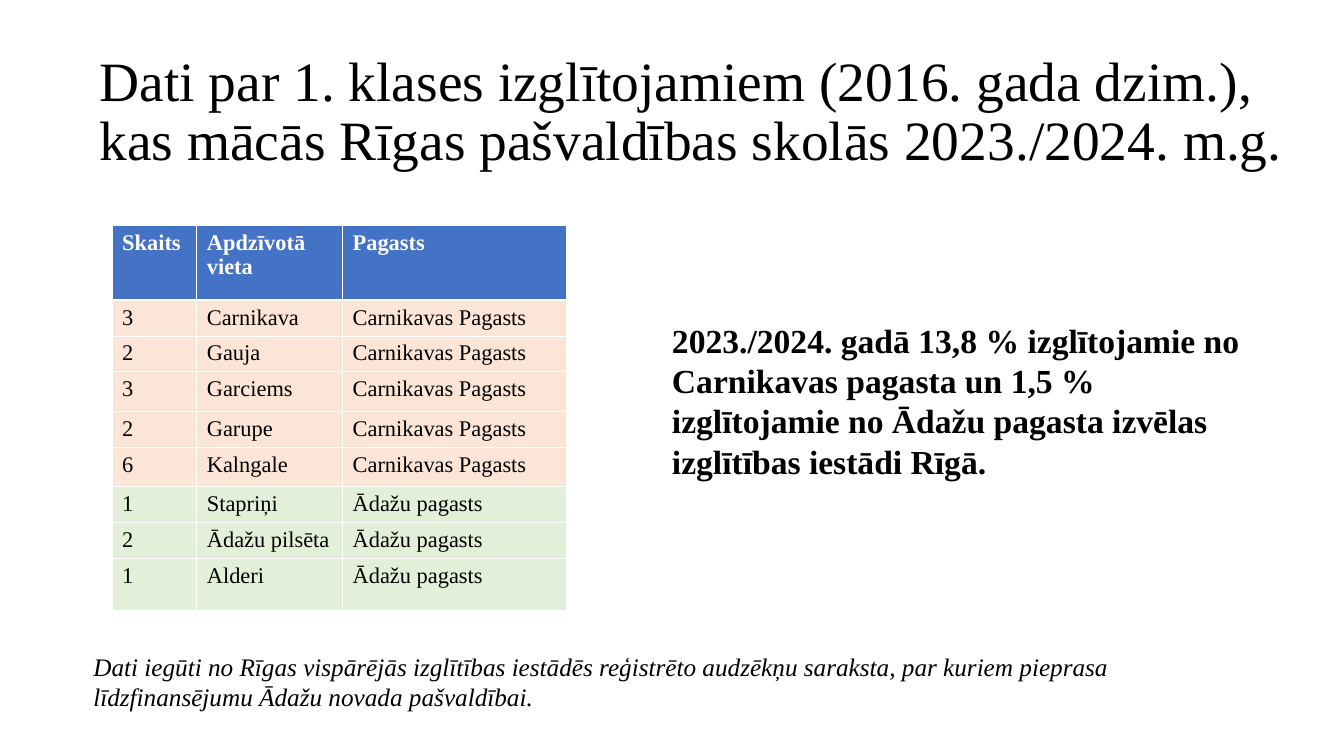
from lxml import etree
from pptx import Presentation
from pptx.dml.color import RGBColor
from pptx.enum.text import MSO_ANCHOR, MSO_AUTO_SIZE, PP_ALIGN
from pptx.oxml.ns import qn
from pptx.util import Cm, Pt

LEFT = PP_ALIGN.LEFT
MIDDLE = MSO_ANCHOR.MIDDLE
NO_AUTOFIT = MSO_AUTO_SIZE.NONE
GROW = MSO_AUTO_SIZE.SHAPE_TO_FIT_TEXT

FONT = "Times New Roman"
BLACK = RGBColor(0x00, 0x00, 0x00)
WHITE = RGBColor(0xFF, 0xFF, 0xFF)
HEADER_BLUE = RGBColor(0x44, 0x72, 0xC4)
CARNIKAVA_PEACH = RGBColor(0xFB, 0xE5, 0xD6)
ADAZI_GREEN = RGBColor(0xE2, 0xF0, 0xD9)

TITLE = ("Dati par 1. klases izglītojamiem (2016. gada dzim.), "
         "kas mācās Rīgas pašvaldības skolās 2023./2024. m.g.")
CONCLUSION = ("2023./2024. gadā 13,8 % izglītojamie no Carnikavas pagasta un 1,5 % "
              "izglītojamie no Ādažu pagasta izvēlas izglītības iestādi Rīgā.")
SOURCE_NOTE = ("Dati iegūti no Rīgas vispārējās izglītības iestādēs reģistrēto audzēkņu "
               "saraksta, par kuriem pieprasa līdzfinansējumu Ādažu novada pašvaldībai.")

HEADER = ("Skaits", "Apdzīvotā vieta", "Pagasts")
PARISHES = (
    ("Carnikavas Pagasts", CARNIKAVA_PEACH,
     ((3, "Carnikava"), (2, "Gauja"), (3, "Garciems"), (2, "Garupe"), (6, "Kalngale"))),
    ("Ādažu pagasts", ADAZI_GREEN,
     ((1, "Stapriņi"), (2, "Ādažu pilsēta"), (1, "Alderi"))),
)
COLUMN_WIDTHS = (3.2, 5.51, 8.46)
ROW_HEIGHTS = (2.84, 1.35, 1.35, 1.5, 1.35, 1.5, 1.35, 1.35, 1.96)


def place(shape, box):
    """Move and size a shape to a box of left, top, width and height in cm."""
    shape.left, shape.top, shape.width, shape.height = map(Cm, box)


def style_paragraph(paragraph, size, color=BLACK, bold=False, italic=False):
    """Set the font of a whole paragraph."""
    font = paragraph.font
    font.name, font.size = FONT, Pt(size)
    font.bold, font.italic = bold, italic
    font.color.rgb = color


def add_title(slide, box):
    """Fill and format the title placeholder."""
    title = slide.shapes.title
    place(title, box)
    frame = title.text_frame
    frame.text = TITLE
    frame.word_wrap = True
    frame.auto_size = NO_AUTOFIT
    frame.vertical_anchor = MIDDLE
    paragraph = frame.paragraphs[0]
    paragraph.alignment = LEFT
    paragraph.line_spacing = 0.9
    style_paragraph(paragraph, 59.4)


def add_text(slide, box, text, size, **style):
    """Add a wrapped text box with one paragraph."""
    frame = slide.shapes.add_textbox(*map(Cm, box)).text_frame
    frame.word_wrap = True
    frame.auto_size = GROW
    frame.text = text
    style_paragraph(frame.paragraphs[0], size, **style)


def add_cell_borders(cell, top_width, bottom_width):
    """Draw white borders around a cell, with widths in points."""
    properties = cell._tc.get_or_add_tcPr()
    widths = {"a:lnL": 1, "a:lnR": 1, "a:lnT": top_width, "a:lnB": bottom_width}
    for position, (tag, width) in enumerate(widths.items()):
        line = etree.Element(qn(tag), w=str(Pt(width)))
        fill = etree.SubElement(line, qn("a:solidFill"))
        etree.SubElement(fill, qn("a:srgbClr"), val=str(WHITE))
        properties.insert(position, line)


def add_pupil_table(slide, left, top):
    """Add the table of pupils by settlement, tinted by parish."""
    rows = [(HEADER, HEADER_BLUE)]
    for parish, tint, settlements in PARISHES:
        rows += [((str(count), name, parish), tint) for count, name in settlements]
    table = slide.shapes.add_table(
        len(rows), len(HEADER), Cm(left), Cm(top),
        Cm(sum(COLUMN_WIDTHS)), Cm(sum(ROW_HEIGHTS))).table
    for column, width in zip(table.columns, COLUMN_WIDTHS):
        column.width = Cm(width)
    for row, height in zip(table.rows, ROW_HEIGHTS):
        row.height = Cm(height)
    for row_index, (values, tint) in enumerate(rows):
        is_header = row_index == 0
        for column_index, value in enumerate(values):
            cell = table.cell(row_index, column_index)
            cell.text = value
            cell.margin_left = cell.margin_right = Cm(0.38)
            cell.margin_top = cell.margin_bottom = Cm(0.19)
            cell.fill.solid()
            cell.fill.fore_color.rgb = tint
            add_cell_borders(cell, 3 if row_index == 1 else 1, 3 if is_header else 1)
            style_paragraph(cell.text_frame.paragraphs[0], 24,
                            WHITE if is_header else BLACK, bold=is_header)


def main():
    """Build the slide and save it."""
    presentation = Presentation()
    presentation.slide_width, presentation.slide_height = Cm(50.8), Cm(28.58)
    slide = presentation.slides.add_slide(presentation.slide_layouts[5])
    add_title(slide, (3.51, 1.52, 46.41, 5.51))
    add_pupil_table(slide, 4.24, 8.51)
    add_text(slide, (3.28, 24.49, 44.25, 2.57), SOURCE_NOTE, 27, italic=True)
    add_text(slide, (25.15, 11.96, 22.38, 6.4), CONCLUSION, 36, bold=True)
    presentation.save("out.pptx")


if __name__ == "__main__":
    main()
